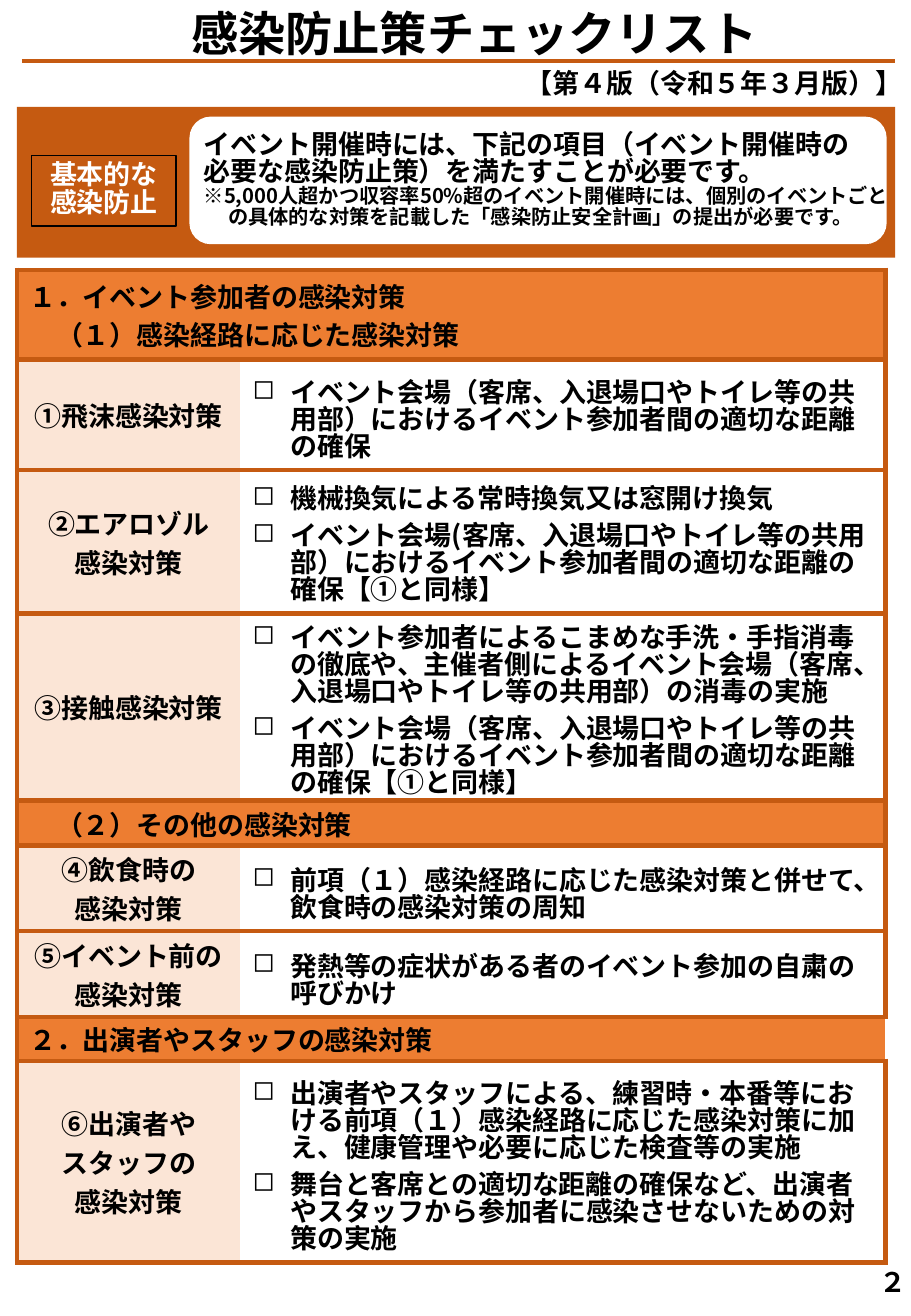
from lxml import etree
from pptx import Presentation
from pptx import util as u
from pptx.dml.color import RGBColor
from pptx.enum import shapes, text
from pptx.oxml.ns import qn

PX = 9144  # 100 px to the inch
THEME = {
    "font": "Noto Sans CJK JP",
    "rust": "C55A11", "orange": "ED7D31", "peach": "FBE5D6",
    "white": "FFFFFF", "black": "000000",
    "title": 28, "body": 16, "note": 12,
}
LEFT, CENTER = text.PP_ALIGN.LEFT, text.PP_ALIGN.CENTER
TOP, MIDDLE, BOTTOM = text.MSO_ANCHOR.TOP, text.MSO_ANCHOR.MIDDLE, text.MSO_ANCHOR.BOTTOM


def write(frame, lines, size="body", color="black", bullet=False, **formats):
    """Fill a text frame with one paragraph for each line."""
    frame.word_wrap = True
    for index, line in enumerate(lines):
        para = frame.paragraphs[0] if index == 0 else frame.add_paragraph()
        if bullet:
            props = para._p.get_or_add_pPr()
            props.set("marL", str(31 * PX))
            props.set("indent", str(-31 * PX))
            etree.SubElement(props, qn("a:buChar")).set("char", "◻")
        for name, value in formats.items():
            setattr(para, name, value)
        span = para.add_run()
        span.text = line
        span.font.size = u.Pt(THEME[size])
        span.font.bold = True
        span.font.color.rgb = RGBColor.from_string(THEME[color])
        span.font.name = THEME["font"]
        east = etree.SubElement(span._r.get_or_add_rPr(), qn("a:ea"))
        east.set("typeface", THEME["font"])


def style_cell(cell, fill, sides, anchor, margins):
    """Draw the chosen borders, then set fill, anchor and margins."""
    props = cell._tc.get_or_add_tcPr()
    for side in "LRTB":
        edge = etree.SubElement(props, qn("a:ln" + side))
        if side in sides:
            edge.set("w", str(u.Pt(3)))
            paint = etree.SubElement(edge, qn("a:solidFill"))
            etree.SubElement(paint, qn("a:srgbClr")).set("val", THEME["rust"])
        else:
            etree.SubElement(edge, qn("a:noFill"))
    cell.fill.solid()
    cell.fill.fore_color.rgb = RGBColor.from_string(THEME[fill])
    cell.vertical_anchor = anchor
    cell.margin_top, cell.margin_bottom = (m * PX for m in margins)


deck = Presentation()
deck.slide_width, deck.slide_height = 750 * PX, 1083 * PX
page = deck.slides.add_slide(deck.slide_layouts[6])

# Banner panels: name, left, top, width, height, fill, line
panels = {}
for name, kind, left, top, width, height, fill, line in [
    ("banner", "RECTANGLE", 14, 88, 723, 124, "rust", None),
    ("card", "ROUNDED_RECTANGLE", 156, 96, 574, 105, "white", None),
    ("label", "RECTANGLE", 26, 128, 119, 58, None, "black"),
]:
    panel = page.shapes.add_shape(getattr(shapes.MSO_SHAPE, kind),
                                  left * PX, top * PX, width * PX, height * PX)
    panel.shadow.inherit = False
    if fill:
        panel.fill.solid()
        panel.fill.fore_color.rgb = RGBColor.from_string(THEME[fill])
    else:
        panel.fill.background()
    if line:
        panel.line.color.rgb = RGBColor.from_string(THEME[line])
        panel.line.width = u.Pt(1)
    else:
        panel.line.fill.background()
    panels[name] = panel

label = panels["label"].text_frame
label.vertical_anchor = TOP
label.margin_top, label.margin_bottom = 6 * PX, 0
write(label, ["基本的な", "感染防止"], color="white", alignment=CENTER, line_spacing=0.85)

# Banner message with its hanging note
box = page.shapes.add_textbox(158 * PX, 104 * PX, 584 * PX, 109 * PX)
write(box.text_frame, [
    "イベント開催時には、下記の項目（イベント開催時の",
    "必要な感染防止策）を満たすことが必要です。",
    "※5,000人超かつ収容率50%超のイベント開催時には、個別のイベントごとの具体的な対策を記載した「感染防止安全計画」の提出が必要です。",
], line_spacing=0.85)
note = box.text_frame.paragraphs[2]
note.runs[0].font.size = u.Pt(THEME["note"])
note._p.pPr.set("marL", str(20 * PX))
note._p.pPr.set("indent", str(-20 * PX))

# Title, edition and page number
for line, left, top, width, height, size, anchor in [
    ("感染防止策チェックリスト", -23, 6, 827, 57, "title", TOP),
    ("【第４版（令和５年３月版）】", 413, 54, 350, 37, "body", TOP),
    ("２", 706, 1038, 59, 37, "body", MIDDLE),
]:
    box = page.shapes.add_textbox(left * PX, top * PX, width * PX, height * PX)
    box.text_frame.vertical_anchor = anchor
    write(box.text_frame, [line], size, alignment=CENTER, line_spacing=0.85)

# Rule under the title
rule = page.shapes.add_connector(shapes.MSO_CONNECTOR.STRAIGHT,
                                 18 * PX, 50 * PX, 737 * PX, 50 * PX)
rule.line.color.rgb = RGBColor.from_string(THEME["rust"])
rule.line.width = u.Pt(2.25)
etree.SubElement(rule._element.spPr, qn("a:effectLst"))

# Checklists: each row is height, heading lines, check items (None for a section)
DISTANCE = "イベント会場（客席、入退場口やトイレ等の共用部）におけるイベント参加者間の適切な距離の確保"
checklists = [
    (222, [
        (74, ["１．イベント参加者の感染対策", "　（１）感染経路に応じた感染対策"], None),
        (91, ["①飛沫感染対策"], [DISTANCE]),
        (118, ["②エアロゾル", "感染対策"], [
            "機械換気による常時換気又は窓開け換気",
            DISTANCE.replace("（", "(") + "【①と同様】"]),
        (154, ["③接触感染対策"], [
            "イベント参加者によるこまめな手洗・手指消毒の徹底や、主催者側によるイベント会場（客席、入退場口やトイレ等の共用部）の消毒の実施",
            DISTANCE + "【①と同様】"]),
    ]),
    (659, [
        (37, ["　（２）その他の感染対策"], None),
        (70, ["④飲食時の", "感染対策"],
         ["前項（１）感染経路に応じた感染対策と併せて、飲食時の感染対策の周知"]),
        (71, ["⑤イベント前の感染対策"],
         ["発熱等の症状がある者のイベント参加の自粛の呼びかけ"]),
        (36, ["２．出演者やスタッフの感染対策"], None),
        (166, ["⑥出演者や", "スタッフの", "感染対策"], [
            "出演者やスタッフによる、練習時・本番等における前項（１）感染経路に応じた感染対策に加え、健康管理や必要に応じた検査等の実施",
            "舞台と客席との適切な距離の確保など、出演者やスタッフから参加者に感染させないための対策の実施"]),
    ]),
]
COLUMNS = (184, 531)
for top, rows in checklists:
    total = sum(row[0] for row in rows)
    table = page.shapes.add_table(len(rows), 2, 14 * PX, top * PX,
                                  sum(COLUMNS) * PX, total * PX).table
    table.first_row = table.horz_banding = False
    for column, width in zip(table.columns, COLUMNS):
        column.width = width * PX
    for index, (height, heading, items) in enumerate(rows):
        table.rows[index].height = height * PX
        name, checks = table.cell(index, 0), table.cell(index, 1)
        if items is None:
            name.merge(checks)
            sides = "LRTB" if index == 0 else "LTB"
            for cell in (name, checks):
                style_cell(cell, "orange", sides, MIDDLE, (0, 0))
            write(name.text_frame, heading, alignment=LEFT)
            continue
        style_cell(name, "peach", "LTB", MIDDLE, (0, 0))
        write(name.text_frame, heading, alignment=CENTER)
        tall = heading == ["③接触感染対策"]
        style_cell(checks, "white", "RTB", MIDDLE if tall else BOTTOM,
                   (12, 0) if tall else (5, 5))
        write(checks.text_frame, items, bullet=True,
              line_spacing=u.Pt(16), space_after=u.Pt(6))

deck.save("out.pptx")
